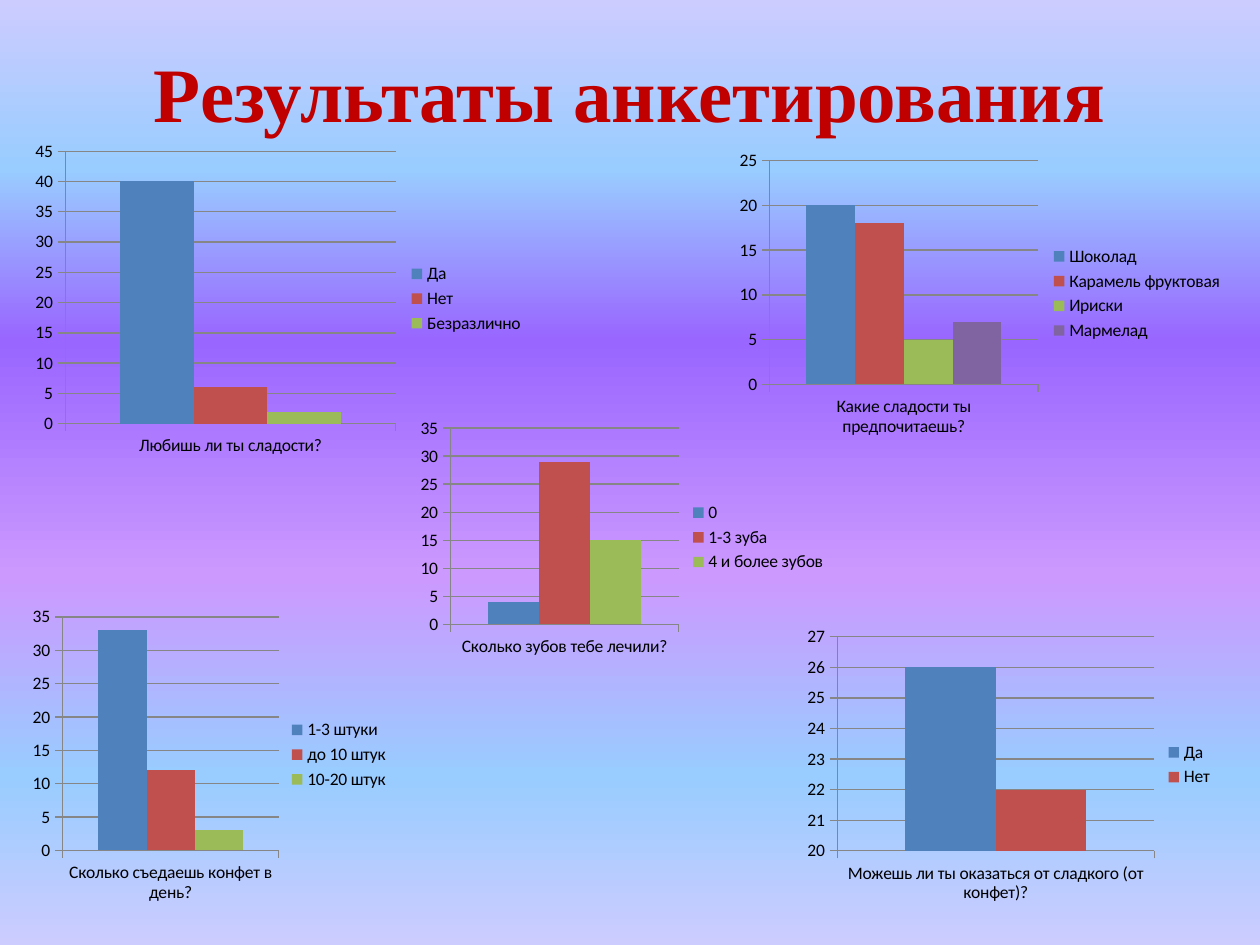
from lxml.etree import SubElement
from pptx import Presentation
from pptx.chart.data import CategoryChartData
from pptx.dml.color import RGBColor
from pptx.enum.chart import XL_CHART_TYPE as ChartType, XL_LEGEND_POSITION as LegendPosition
from pptx.enum.chart import XL_TICK_MARK as TickMark
from pptx.enum.text import MSO_ANCHOR as Anchor, PP_ALIGN as Align
from pptx.oxml.ns import qn
from pptx.util import Inches, Pt

THEME = {
    "title_font": "Times New Roman",
    "title_size": Pt(44),
    "title_color": "C00000",
    "chart_font": "Calibri",
    "chart_size": Pt(10),
    "chart_color": "000000",
    "line_color": "868686",
    "line_width": Pt(0.75),
    "series": ["4F81BD", "C0504D", "9BBB59", "8064A2"],
    "background": [(0, "CCCCFF"), (18, "99CCFF"), (36, "9966FF"),
                   (61, "CC99FF"), (82, "99CCFF"), (100, "CCCCFF")],
}

# question, answers, value axis (min, max, step), box in percent of the slide
SURVEY = [
    ("Любишь ли ты сладости?",
     {"Да": 40, "Нет": 6, "Безразлично": 2},
     (0, 45, 5), (2, 14.27, 40.6, 34.67)),
    ("Какие сладости ты предпочитаешь?",
     {"Шоколад": 20, "Карамель фруктовая": 18, "Ириски": 5, "Мармелад": 7},
     (0, 25, 5), (57.9, 15.33, 40.2, 31.47)),
    ("Сколько съедаешь конфет в день?",
     {"1-3 штуки": 33, "до 10 штук": 12, "10-20 штук": 3},
     (0, 35, 5), (2, 63.6, 29.9, 32.53)),
    ("Можешь ли ты оказаться от сладкого (от конфет)?",
     {"Да": 26, "Нет": 22},
     (20, 27, 1), (63.4, 65.73, 33.9, 30.4)),
    ("Сколько зубов тебе лечили?",
     {"0": 4, "1-3 зуба": 29, "4 и более зубов": 15},
     (0, 35, 5), (32.7, 43.73, 33.9, 26.27)),
]

presentation = Presentation()
presentation.slide_width, presentation.slide_height = Inches(10), Inches(7.5)
slide = presentation.slides.add_slide(presentation.slide_layouts[5])


def place(left, top, width, height):
    """Turn percentages of the slide into left, top, width and height."""
    across, down = presentation.slide_width / 100, presentation.slide_height / 100
    return int(left * across), int(top * down), int(width * across), int(height * down)


def style_line(line):
    line.color.rgb = RGBColor.from_string(THEME["line_color"])
    line.width = THEME["line_width"]


# Background: python-pptx offers two gradient stops, so the list is refilled
background = slide.background.fill
background.gradient()
background.gradient_angle = 270
stops = slide.element.find(".//" + qn("a:gsLst"))
for stop in list(stops):
    stops.remove(stop)
for position, color in THEME["background"]:
    stop = SubElement(stops, qn("a:gs"), pos=str(position * 1000))
    SubElement(stop, qn("a:srgbClr"), val=color)

# Title
title = slide.shapes.title
title.left, title.top, title.width, title.height = place(5, 4, 90, 11.33)
title.text_frame.text = "Результаты анкетирования"
title.text_frame.vertical_anchor = Anchor.MIDDLE
paragraph = title.text_frame.paragraphs[0]
paragraph.alignment = Align.CENTER
font = paragraph.runs[0].font
font.name, font.size, font.bold = THEME["title_font"], THEME["title_size"], True
font.color.rgb = RGBColor.from_string(THEME["title_color"])

# One chart for each question
for question, answers, scale, box in SURVEY:
    data = CategoryChartData()
    data.categories = [question]
    for answer, count in answers.items():
        data.add_series(answer, [count])
    chart = slide.shapes.add_chart(ChartType.COLUMN_CLUSTERED, *place(*box), data).chart
    chart.has_title = False
    chart.font.name, chart.font.size = THEME["chart_font"], THEME["chart_size"]
    chart.font.color.rgb = RGBColor.from_string(THEME["chart_color"])

    chart.has_legend = True
    chart.legend.position = LegendPosition.RIGHT
    chart.legend.include_in_layout = False

    plot = chart.plots[0]
    plot.gap_width, plot.overlap, plot.vary_by_categories = 150, 0, False
    for series, color in zip(plot.series, THEME["series"]):
        series.format.fill.solid()
        series.format.fill.fore_color.rgb = RGBColor.from_string(color)

    value_axis = chart.value_axis
    value_axis.minimum_scale, value_axis.maximum_scale, value_axis.major_unit = scale
    value_axis.has_major_gridlines = True
    style_line(value_axis.major_gridlines.format.line)
    for axis in (chart.category_axis, value_axis):
        axis.major_tick_mark = TickMark.OUTSIDE
        axis.minor_tick_mark = TickMark.NONE
        style_line(axis.format.line)

presentation.save("out.pptx")
